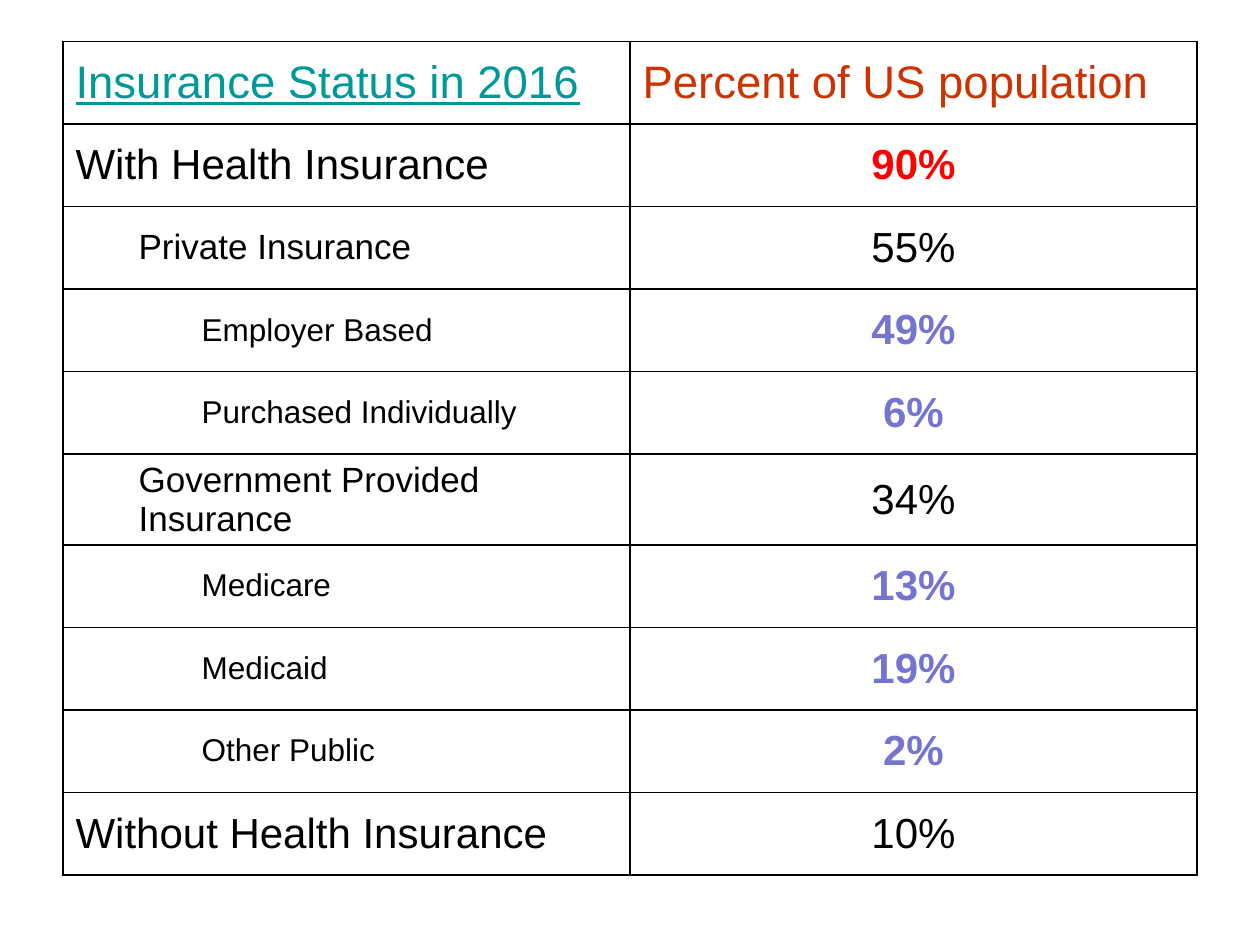
from lxml import etree
from pptx import Presentation
from pptx.dml.color import RGBColor
from pptx.enum.text import MSO_ANCHOR, PP_ALIGN
from pptx.oxml.ns import qn
from pptx.util import Inches, Pt

MIDDLE = MSO_ANCHOR.MIDDLE
LEFT, CENTER = PP_ALIGN.LEFT, PP_ALIGN.CENTER
BLACK, WHITE, TEAL, RUST = "000000", "FFFFFF", "009999", "CC3300"
RED, VIOLET = "FF0000", "7575D1"
LEVEL_SIZES = [24, 20, 18]
HEADER_SIZE = 26


def color(value):
    return RGBColor.from_string(value)


def fill_cell(cell, text, size, text_color, align=LEFT, level=0, bold=False, underline=False):
    cell.fill.solid()
    cell.fill.fore_color.rgb = color(WHITE)
    cell.vertical_anchor = MIDDLE
    cell.text_frame.text = text
    para = cell.text_frame.paragraphs[0]
    para.alignment = align
    para.level = level
    properties = para._p.get_or_add_pPr()
    properties.set("marL", str(Inches(0.5 * level)))
    properties.set("indent", "0")
    font = para.runs[0].font
    font.name = "Arial"
    font.size = Pt(size)
    font.bold = bold
    font.underline = underline
    font.color.rgb = color(text_color)
    cell_properties = cell._tc.get_or_add_tcPr()
    for index, side in enumerate(["lnL", "lnR", "lnT", "lnB"]):
        border = etree.Element(qn(f"a:{side}"), w=str(Pt(1)))
        border_fill = etree.SubElement(border, qn("a:solidFill"))
        etree.SubElement(border_fill, qn("a:srgbClr"), val=BLACK)
        cell_properties.insert(index, border)


statuses = [
    ("With Health Insurance", 0, "90%", RED),
    ("Private Insurance", 1, "55%", BLACK),
    ("Employer Based", 2, "49%", VIOLET),
    ("Purchased Individually", 2, "6%", VIOLET),
    ("Government Provided Insurance", 1, "34%", BLACK),
    ("Medicare", 2, "13%", VIOLET),
    ("Medicaid", 2, "19%", VIOLET),
    ("Other Public", 2, "2%", VIOLET),
    ("Without Health Insurance", 0, "10%", BLACK),
]

deck = Presentation()
deck.slide_width = Inches(10)
deck.slide_height = Inches(7.5)
page = deck.slides.add_slide(deck.slide_layouts[6])

row_count = len(statuses) + 1
frame = page.shapes.add_table(
    row_count, 2, Inches(0.5), Inches(0.33), Inches(9), Inches(0.655 * row_count)
)
table = frame.table

fill_cell(table.cell(0, 0), "Insurance Status in 2016", HEADER_SIZE, TEAL, underline=True)
fill_cell(table.cell(0, 1), "Percent of US population", HEADER_SIZE, RUST)

for row, (status, level, percent, percent_color) in enumerate(statuses, start=1):
    fill_cell(table.cell(row, 0), status, LEVEL_SIZES[level], BLACK, level=level)
    fill_cell(
        table.cell(row, 1), percent, 24, percent_color, align=CENTER, bold=percent_color != BLACK
    )

deck.save("out.pptx")
